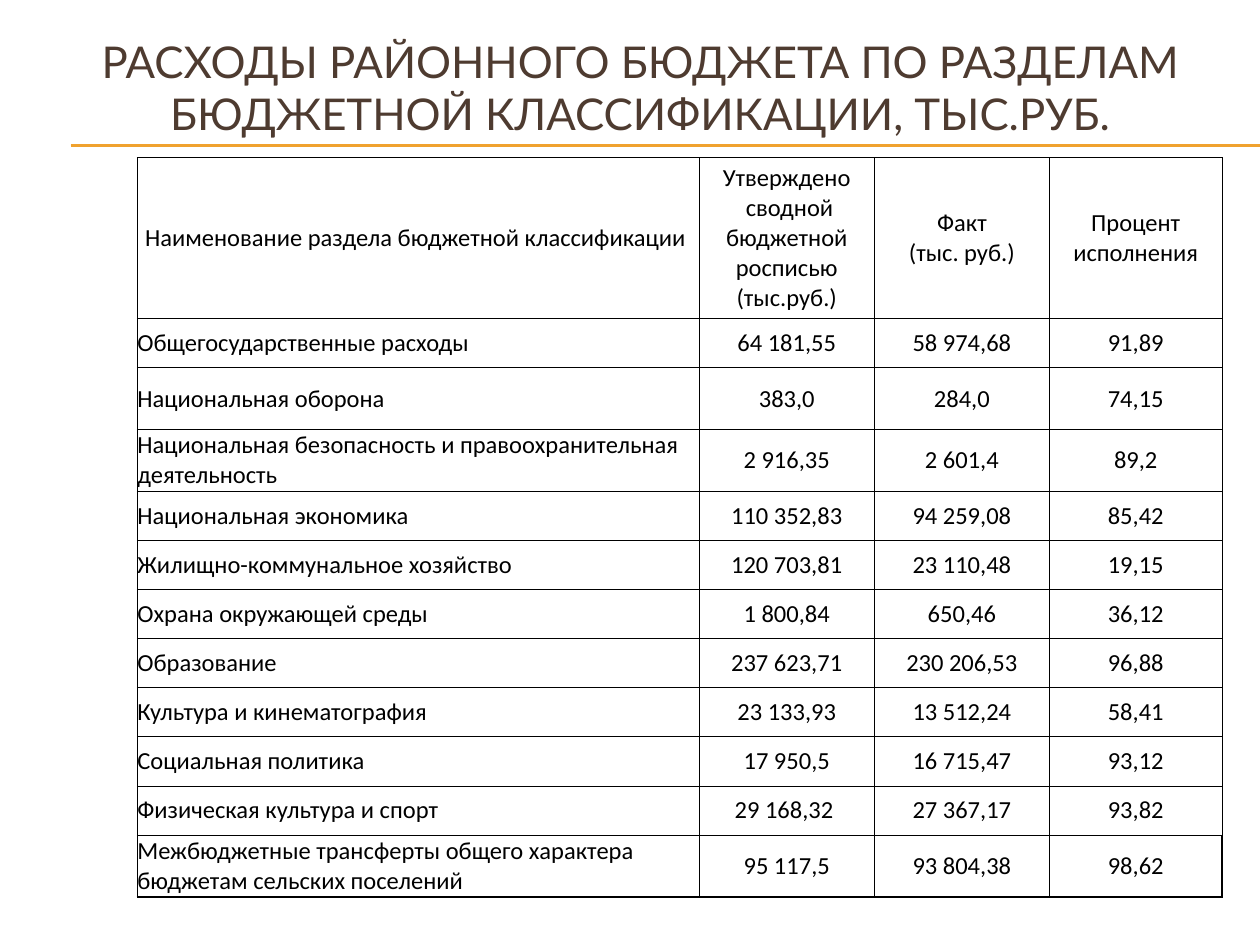
from lxml import etree
from pptx import Presentation
from pptx.dml.color import RGBColor
from pptx.enum import shapes, text
from pptx.oxml import ns
from pptx.util import Inches, Pt

BLACK = RGBColor(0x00, 0x00, 0x00)
BROWN = RGBColor(0x4E, 0x3B, 0x30)
ORANGE = RGBColor(0xF0, 0xA2, 0x2E)

COLUMN_WIDTHS = [1.48, 1.47, 1.51, 1.39, 1.39, 1.37]
HEADER_HEIGHT, ROW_HEIGHT, TALL_HEIGHT, FOOT_HEIGHT = 1.28, 0.39, 0.49, 0.23
NAME_SPAN = 3

HEADER = (
    "Наименование раздела бюджетной классификации ",
    "Утверждено\n сводной бюджетной росписью\n(тыс.руб.)",
    "Факт\n(тыс. руб.)",
    "Процент исполнения",
)
EXPENSES = [
    ("Общегосударственные расходы", "64 181,55", "58 974,68", "91,89"),
    ("Национальная оборона", "383,0", "284,0", "74,15"),
    ("Национальная безопасность и правоохранительная деятельность",
     "2 916,35", "2 601,4", "89,2"),
    ("Национальная экономика", "110 352,83", "94 259,08", "85,42"),
    ("Жилищно-коммунальное хозяйство", "120 703,81", "23 110,48", "19,15"),
    ("Охрана окружающей среды", "1 800,84", "650,46", "36,12"),
    ("Образование", "237 623,71", "230 206,53", "96,88"),
    ("Культура и кинематография", "23 133,93", "13 512,24", "58,41"),
    ("Социальная политика", "17 950,5", "16 715,47", "93,12"),
    ("Физическая культура и спорт", "29 168,32 ", "27 367,17", "93,82"),
    ("Межбюджетные трансферты общего характера бюджетам сельских поселений",
     "95 117,5", "93 804,38", "98,62"),
]
TALL_ROWS = (2, 3, 11)


def set_borders(cell, widths):
    """Draw black borders; widths maps L, R, T, B to points, 0 for no line."""
    properties = cell._tc.get_or_add_tcPr()
    for position, side in enumerate("LRTB"):
        line = etree.Element(ns.qn(f"a:ln{side}"), w=str(Pt(widths[side])))
        if widths[side]:
            fill = etree.SubElement(line, ns.qn("a:solidFill"))
            etree.SubElement(fill, ns.qn("a:srgbClr"), val=str(BLACK))
        else:
            etree.SubElement(line, ns.qn("a:noFill"))
        properties.insert(position, line)


presentation = Presentation()
presentation.slide_width = Inches(10)
presentation.slide_height = Inches(7.5)
slide = presentation.slides.add_slide(presentation.slide_layouts[6])

for y in (1.15, 1.16):
    rule = slide.shapes.add_connector(
        shapes.MSO_CONNECTOR.STRAIGHT, Inches(0.56), Inches(y), Inches(10), Inches(y))
    rule.line.color.rgb = ORANGE
    rule.line.width = Pt(0.75)
    etree.SubElement(rule._element.spPr, ns.qn("a:effectLst"))

title = slide.shapes.add_textbox(Inches(0.33), Inches(0.23), Inches(9.5), Inches(0.92))
title_frame = title.text_frame
title_frame.word_wrap = True
title_frame.vertical_anchor = text.MSO_ANCHOR.MIDDLE
title_frame.text = ("РАСХОДЫ РАЙОННОГО БЮДЖЕТА ПО РАЗДЕЛАМ "
                    "БЮДЖЕТНОЙ КЛАССИФИКАЦИИ, ТЫС.РУБ.")
title_frame.paragraphs[0].alignment = text.PP_ALIGN.CENTER
title_font = title_frame.paragraphs[0].runs[0].font
title_font.name = "Lato"
title_font.size = Pt(25)
title_font.color.rgb = BROWN

rows = [HEADER, *EXPENSES]
foot_row = len(rows)
heights = [HEADER_HEIGHT]
heights += [TALL_HEIGHT if row in TALL_ROWS else ROW_HEIGHT for row in range(1, foot_row)]
heights.append(FOOT_HEIGHT)

table = slide.shapes.add_table(
    len(heights), len(COLUMN_WIDTHS), Inches(1.09), Inches(1.25),
    Inches(sum(COLUMN_WIDTHS)), Inches(sum(heights))).table
table.first_row = table.horz_banding = False
for column, width in zip(table.columns, COLUMN_WIDTHS):
    column.width = Inches(width)
for table_row, height in zip(table.rows, heights):
    table_row.height = Inches(height)

for row in range(len(heights)):
    for column in range(len(COLUMN_WIDTHS)):
        cell = table.cell(row, column)
        cell.fill.background()
        cell.margin_left = cell.margin_right = cell.margin_top = cell.margin_bottom = 0
        cell.vertical_anchor = text.MSO_ANCHOR.MIDDLE
        if row == foot_row:
            set_borders(cell, {"L": 0, "R": 0, "T": 1, "B": 0})
            etree.SubElement(cell.text_frame.paragraphs[0]._p, ns.qn("a:endParaRPr"), sz="1200")
        elif row == foot_row - 1:
            set_borders(cell, {"L": 1, "R": 1, "T": 0.5, "B": 1})
        else:
            set_borders(cell, dict.fromkeys("LRTB", 0.5))

for row, values in enumerate(rows):
    table.cell(row, 0).merge(table.cell(row, NAME_SPAN - 1))
    for index, value in enumerate(values):
        cell = table.cell(row, index + NAME_SPAN - 1 if index else 0)
        cell.text_frame.text = value
        centered = row == 0 or index > 0
        for paragraph in cell.text_frame.paragraphs:
            paragraph.alignment = text.PP_ALIGN.CENTER if centered else text.PP_ALIGN.LEFT
            font = paragraph.runs[0].font
            font.name = "Calibri"
            font.size = Pt(14)
            font.color.rgb = BLACK

presentation.save("out.pptx")
